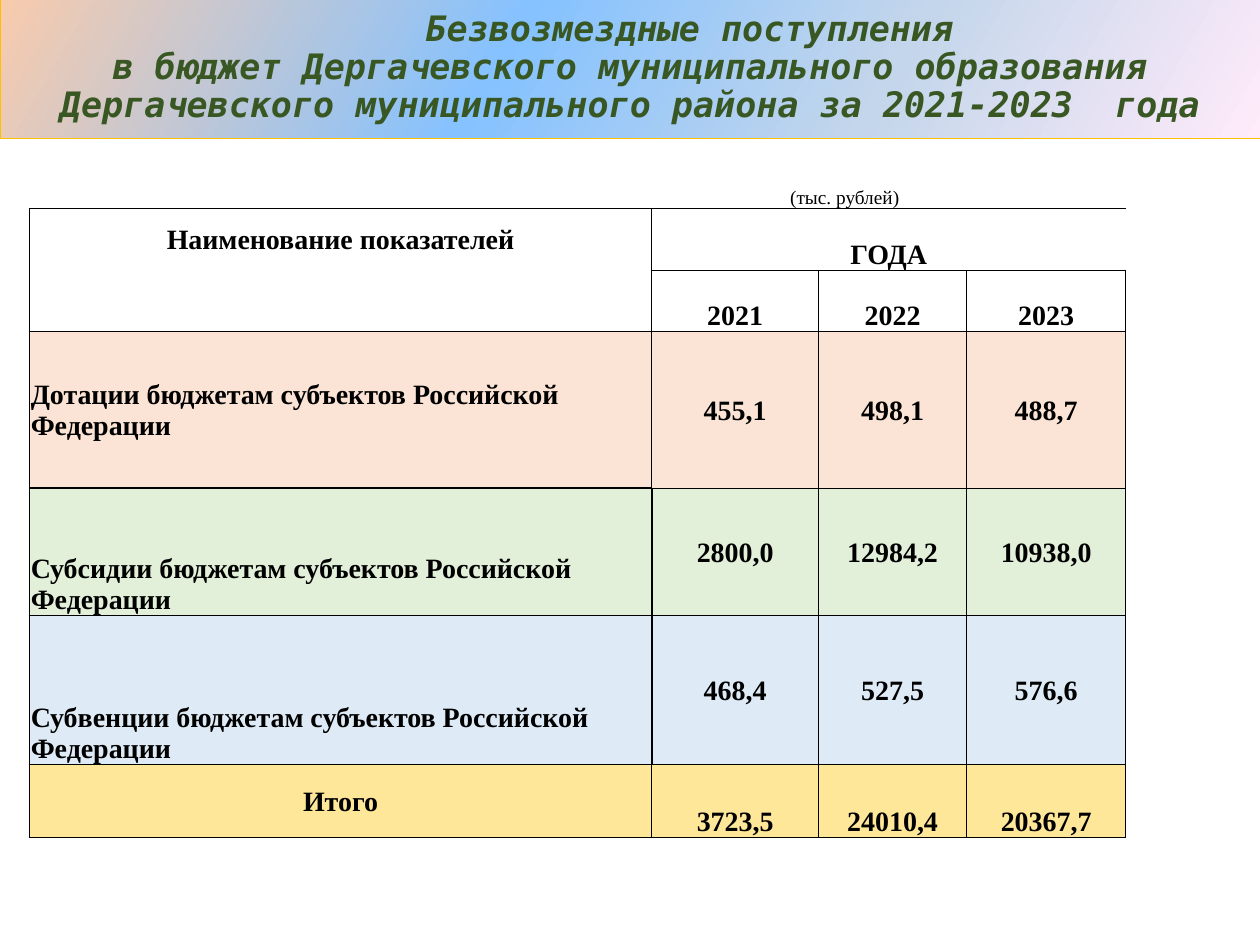
from copy import deepcopy

from lxml.etree import SubElement
from pptx import Presentation
from pptx.dml.color import RGBColor
from pptx.enum.text import MSO_ANCHOR, MSO_AUTO_SIZE, PP_ALIGN
from pptx.oxml.ns import qn
from pptx.util import Cm, Pt

BLACK, GREEN = "000000", "385723"
TITLE = ("Безвозмездные поступления\vв бюджет Дергачевского муниципального образования "
         "Дергачевского муниципального района за 2021-2023  года")
TITLE_STOPS = [(0, "F8CBAD"), (0.4, "85C2FF"), (0.7, "C4D6EB"), (1, "FFEBFA")]
COLS = [12.55, 2.01, 1.35, 2.41, 0.58, 3.2]
ROWS = [1.24, 1.24, 1.24, 3.15, 2.57, 3, 1.47]
YEAR_SPANS = [(1, 2), (3, 4), (5, 5)]
YEARS = ["2021", "2022", "2023"]
MIDDLE, BOTTOM = MSO_ANCHOR.MIDDLE, MSO_ANCHOR.BOTTOM
LEFT, CENTER = PP_ALIGN.LEFT, PP_ALIGN.CENTER
# label, values, fill, label alignment, label anchor, value anchor, label border
INCOME = [
    ("Дотации бюджетам субъектов Российской Федерации",
     ["455,1", "498,1", "488,7"], "FBE4D5", LEFT, MIDDLE, MIDDLE, 0.5),
    ("Субсидии бюджетам субъектов Российской Федерации",
     ["2800,0", "12984,2", "10938,0"], "E2EFD9", LEFT, BOTTOM, MIDDLE, 1),
    ("Субвенции бюджетам субъектов Российской Федерации",
     ["468,4", "527,5", "576,6"], "DEEBF6", LEFT, BOTTOM, MIDDLE, 1),
    ("Итого",
     ["3723,5", "24010,4", "20367,7"], "FFE799", CENTER, MIDDLE, BOTTOM, 0.5),
]


def rgb(value):
    return RGBColor.from_string(value)


def set_attrs(obj, values):
    for name, value in values.items():
        setattr(obj, name, value)


def format_font(font, color, **values):
    set_attrs(font, values)
    font.color.rgb = rgb(color)


def fill_gradient(sp, stops, angle):
    sp.fill.gradient()
    sp.fill.gradient_angle = angle
    gs_list = sp._element.spPr.find(qn("a:gradFill")).find(qn("a:gsLst"))
    for _ in range(len(stops) - len(gs_list)):
        gs_list.append(deepcopy(gs_list[0]))
    for stop, (position, color) in zip(sp.fill.gradient_stops, stops):
        stop.position = position
        stop.color.rgb = rgb(color)


def add_title(slide):
    sp = slide.shapes.title
    set_attrs(sp, dict(left=Cm(0), top=Cm(-0.05), width=Cm(25.4), height=Cm(2.84)))
    fill_gradient(sp, TITLE_STOPS, 330)
    sp.line.color.rgb = rgb("FFC000")
    sp.line.width = Pt(0.5)
    tf = sp.text_frame
    set_attrs(tf, dict(word_wrap=True, auto_size=MSO_AUTO_SIZE.NONE,
                       vertical_anchor=MIDDLE))
    p = tf.paragraphs[0]
    p.text = TITLE
    set_attrs(p, dict(alignment=CENTER, line_spacing=0.9))
    p._p.get_or_add_pPr().set("indent", str(Cm(2.4)))
    for r in p.runs:
        format_font(r.font, GREEN, name="DejaVu Sans Mono", size=Pt(20),
                    bold=True, italic=True)


def set_borders(cell, edges, width):
    """Draw the edges named by the letters L, R, T and B; clear the others."""
    tc_pr = cell._tc.get_or_add_tcPr()
    for edge in "LRTB":
        ln = SubElement(tc_pr, qn(f"a:ln{edge}"), w=str(Pt(width)))
        if edge in edges:
            solid = SubElement(ln, qn("a:solidFill"))
            SubElement(solid, qn("a:srgbClr"), val=BLACK)
        else:
            SubElement(ln, qn("a:noFill"))


def fill_cells(table, row, span, text="", edges="LRTB", fill=None, align=CENTER,
               anchor=BOTTOM, border=0.5, size=16, bold=True):
    """Format the cells of a column span, merge them and write the text."""
    first, last = span
    for col in range(first, last + 1):
        cell = table.cell(row, col)
        set_borders(cell, edges, border)
        if fill:
            cell.fill.solid()
            cell.fill.fore_color.rgb = rgb(fill)
        else:
            cell.fill.background()
    cell = table.cell(row, first)
    if last > first:
        cell.merge(table.cell(row, last))
    set_attrs(cell, dict(margin_left=Cm(0.03), margin_right=Cm(0.03),
                         margin_top=Cm(0.03), margin_bottom=Cm(0),
                         vertical_anchor=anchor))
    if text:
        p = cell.text_frame.paragraphs[0]
        p.alignment = align
        r = p.add_run()
        r.text = text
        format_font(r.font, BLACK, name="Times New Roman", size=Pt(size), bold=bold)


def add_income_table(slide):
    frame = slide.shapes.add_table(len(ROWS), len(COLS), Cm(0.59), Cm(2.97),
                                   Cm(sum(COLS)), Cm(sum(ROWS)))
    table = frame.table
    set_attrs(table, dict(first_row=False, horz_banding=False))
    for column, width in zip(table.columns, COLS):
        column.width = Cm(width)
    for row, height in zip(table.rows, ROWS):
        row.height = Cm(height)

    for span in [(0, 0), (1, 1), (4, 5)]:
        fill_cells(table, 0, span, edges="B")
    fill_cells(table, 0, (2, 3), "(тыс. рублей)", edges="B", size=11, bold=False)
    fill_cells(table, 1, (0, 0), "Наименование показателей", edges="LRT", anchor=MIDDLE)
    fill_cells(table, 1, (1, 5), "ГОДА", edges="LTB")
    fill_cells(table, 2, (0, 0), edges="LRB")
    for span, year in zip(YEAR_SPANS, YEARS):
        fill_cells(table, 2, span, year)

    for row, (label, values, fill, align, anchor, value_anchor, border) in enumerate(INCOME, 3):
        fill_cells(table, row, (0, 0), label, fill=fill, align=align,
                   anchor=anchor, border=border)
        for span, value in zip(YEAR_SPANS, values):
            fill_cells(table, row, span, value, fill=fill, anchor=value_anchor)


def main():
    prs = Presentation()
    set_attrs(prs, dict(slide_width=Cm(25.4), slide_height=Cm(19.05)))
    slide = prs.slides.add_slide(prs.slide_layouts[5])
    add_title(slide)
    add_income_table(slide)
    prs.save("out.pptx")


if __name__ == "__main__":
    main()
